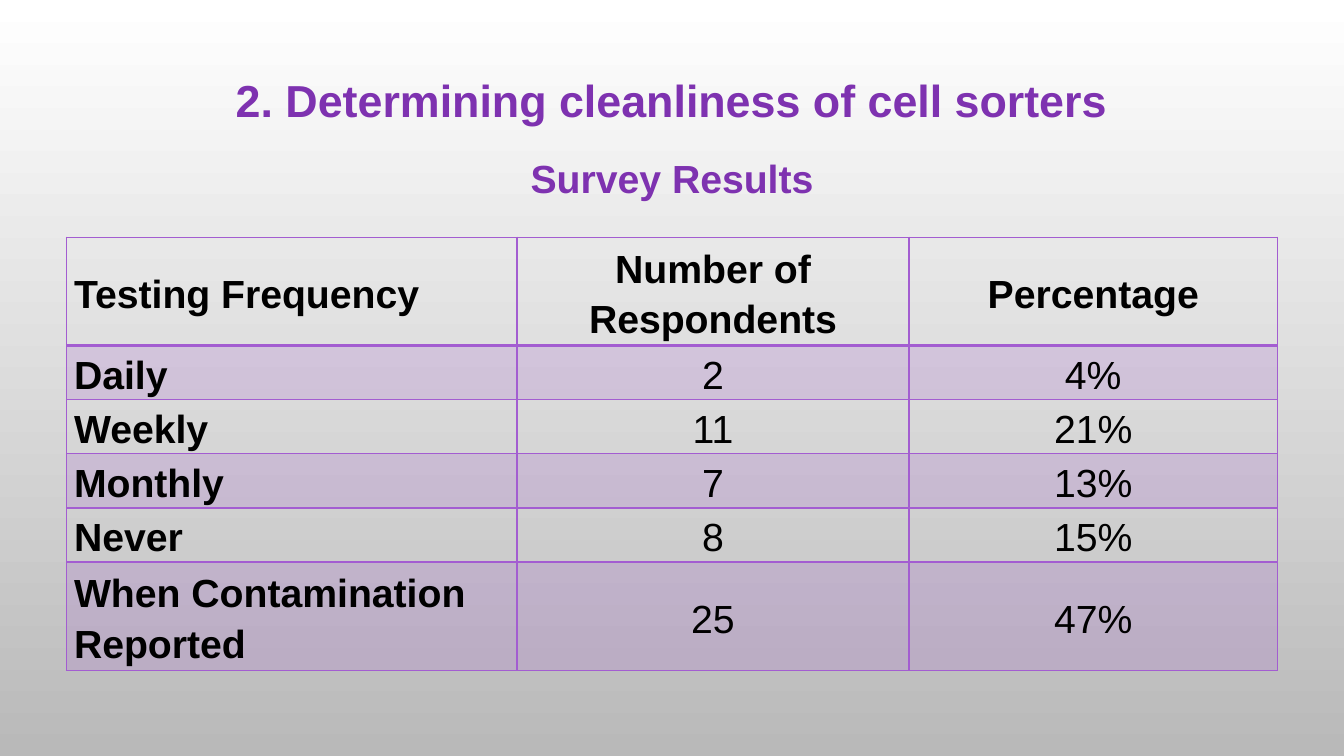
from lxml.etree import SubElement
from pptx import Presentation
from pptx.dml.color import RGBColor
from pptx.enum.text import MSO_ANCHOR as Anchor, MSO_AUTO_SIZE as AutoSize, PP_ALIGN as Align
from pptx.oxml import parse_xml
from pptx.oxml.ns import nsdecls, qn
from pptx.util import Pt

WHITE = RGBColor(0xFF, 0xFF, 0xFF)
GREY = RGBColor(0xB9, 0xB9, 0xB9)
BLACK = RGBColor(0, 0, 0)
PURPLE = RGBColor(0x7E, 0x32, 0xB0)
LILAC = RGBColor(0xA3, 0x5D, 0xD1)

WIDTH, HEIGHT = 960, 540
COLUMNS = [321.8, 280, 263.2]
ROWS = [77, 38.6, 38.6, 38.6, 38.6, 77]
SURVEY = [
    ("Testing Frequency", "Number of Respondents", "Percentage"),
    ("Daily", "2", "4%"),
    ("Weekly", "11", "21%"),
    ("Monthly", "7", "13%"),
    ("Never", "8", "15%"),
    ("When Contamination Reported", "25", "47%"),
]


class SlideBuilder:
    font = "Arial"

    def __init__(self, prs):
        self.s = prs.slides.add_slide(prs.slide_layouts[5])

    def background(self, top, bottom):
        fill = self.s.background.fill
        fill.gradient()
        fill.gradient_angle = 270
        for stop, color in zip(fill.gradient_stops, (top, bottom)):
            stop.color.rgb = color

    def put_text(self, tf, text, size, color, bold=True, align=Align.CENTER, spacing=1.0):
        p = tf.paragraphs[0]
        p.alignment, p.line_spacing = align, spacing
        r = p.add_run()
        r.text = text
        for name, value in {"name": self.font, "size": Pt(size), "bold": bold}.items():
            setattr(r.font, name, value)
        r.font.color.rgb = color

    def heading(self, sp, text, top, height, size):
        box = {"left": 0, "top": Pt(top), "width": Pt(WIDTH), "height": Pt(height)}
        for name, value in box.items():
            setattr(sp, name, value)
        tf = sp.text_frame
        frame = {"word_wrap": True, "auto_size": AutoSize.SHAPE_TO_FIT_TEXT,
                 "vertical_anchor": Anchor.TOP}
        for name, value in frame.items():
            setattr(tf, name, value)
        self.put_text(tf, text, size, PURPLE)

    def title(self, text, top, height, size):
        self.heading(self.s.shapes.title, text, top, height, size)

    def subtitle(self, text, top, height, size):
        sp = self.s.shapes.add_textbox(0, 0, 0, 0)
        self.heading(sp, text, top, height, size)

    def borders(self, cell, widths):
        """Draw the left, right, top and bottom lines of a cell, in that order."""
        tcPr = cell._tc.get_or_add_tcPr()
        for i, (side, width) in enumerate(zip("LRTB", widths)):
            tcPr.insert(i, parse_xml(
                f'<a:ln{side} {nsdecls("a")} w="{Pt(width)}"><a:solidFill>'
                f'<a:srgbClr val="{LILAC}"/></a:solidFill></a:ln{side}>'))

    def tint(self, cell, color, percent):
        cell.fill.solid()
        cell.fill.fore_color.rgb = color
        clr = cell._tc.tcPr.find(qn("a:solidFill"))[0]
        SubElement(clr, qn("a:alpha"), val=str(percent * 1000))

    def table(self, data, left, top, columns, rows, size):
        frame = self.s.shapes.add_table(len(rows), len(columns), Pt(left), Pt(top),
                                        Pt(sum(columns)), Pt(sum(rows)))
        table = frame.table
        table.first_row = table.horz_banding = False
        for column, width in zip(table.columns, columns):
            column.width = Pt(width)
        for i, (row, height) in enumerate(zip(table.rows, rows)):
            row.height = Pt(height)
            for j, (cell, text) in enumerate(zip(row.cells, data[i])):
                layout = {"margin_left": Pt(5.4), "margin_right": Pt(5.4), "margin_top": 0,
                          "margin_bottom": 0, "vertical_anchor": Anchor.MIDDLE}
                for name, value in layout.items():
                    setattr(cell, name, value)
                self.put_text(cell.text_frame, text, size, BLACK, bold=i == 0 or j == 0,
                              align=Align.CENTER if j else Align.LEFT, spacing=1.15)
                if i % 2:
                    self.tint(cell, LILAC, 20)
                else:
                    cell.fill.background()
                self.borders(cell, (1, 1, 2 if i == 1 else 1, 2 if i == 0 else 1))


def main():
    prs = Presentation()
    prs.slide_width, prs.slide_height = Pt(WIDTH), Pt(HEIGHT)
    slide = SlideBuilder(prs)
    slide.background(WHITE, GREY)
    slide.title("2. Determining cleanliness of cell sorters", 48.2, 46, 32)
    slide.subtitle("Survey Results", 106.6, 41.2, 28)
    slide.table(SURVEY, 47.5, 169.5, COLUMNS, ROWS, 28)
    prs.save("out.pptx")


if __name__ == "__main__":
    main()
